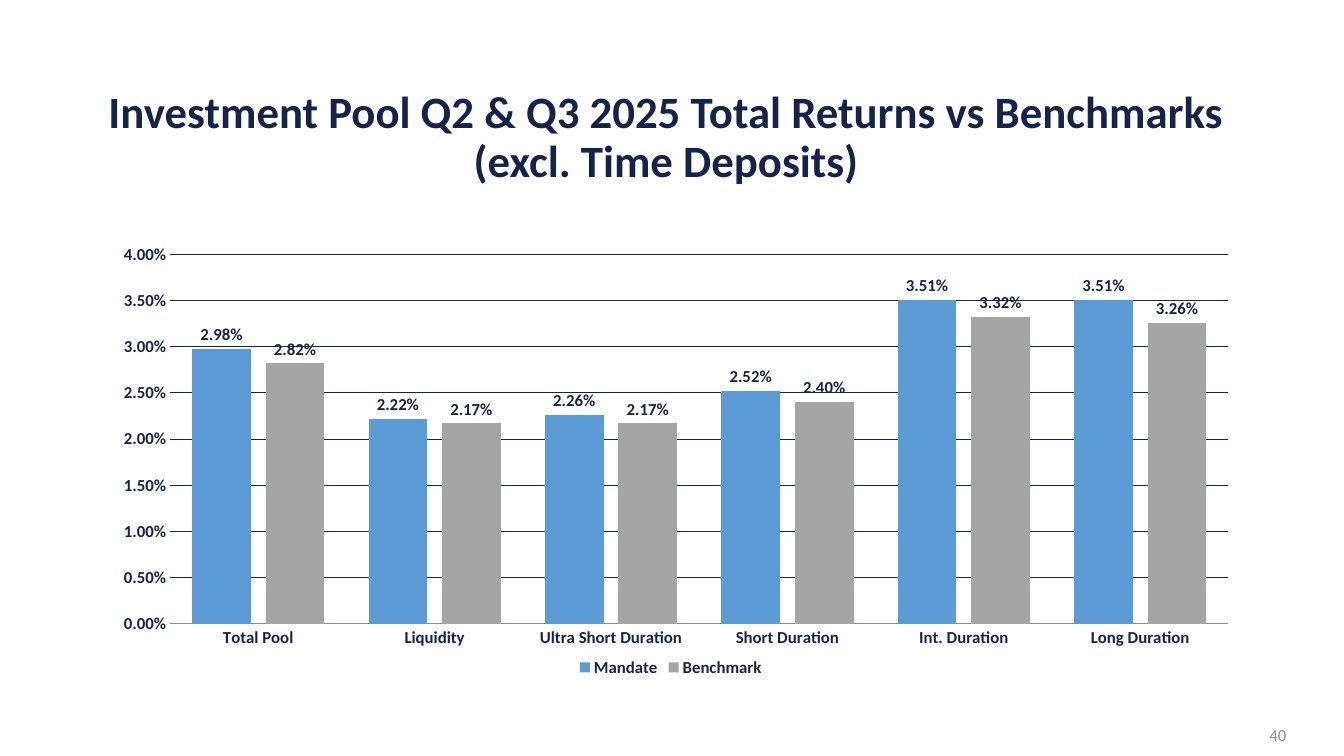
"""Build a slide comparing investment pool returns with their benchmarks."""
from lxml import etree
from pptx import Presentation
from pptx.chart import data
from pptx.dml import color
from pptx.enum import chart as chart_enum, text
from pptx.oxml import ns
from pptx.util import Pt

TITLE = "Investment Pool Q2 & Q3 2025 Total Returns vs Benchmarks (excl. Time Deposits)"
PAGE_NUMBER = "40"
CATEGORIES = ["Total Pool", "Liquidity", "Ultra Short Duration",
              "Short Duration", "Int. Duration", "Long Duration"]
RETURNS = {
    "Mandate": [0.0298, 0.0222, 0.0226, 0.0252, 0.0351, 0.0351],
    "Benchmark": [0.0282, 0.0217, 0.0217, 0.024, 0.0332, 0.0326],
}
COLORS = {"navy": "15234A", "muted": "8C8D96", "Mandate": "5B9BD5", "Benchmark": "A5A5A5"}
FONT = "Calibri"
PERCENT = "0.00%"
TITLE_BOX = (46.8, 54, 858.24, 90)
NUMBER_BOX = (709.92, 510.5, 216, 28.8)
CHART_BOX = (72.72, 144, 812.88, 342.72)
PLOT_AREA = {"x": 0.06, "y": 0.11, "w": 0.93, "h": 0.77}


def points(box):
    return [Pt(length) for length in box]


def rgb(name):
    return color.RGBColor.from_string(COLORS[name])


def style_font(font, size, color_name, bold):
    font.name = FONT
    font.size = Pt(size)
    font.bold = bold
    font.color.rgb = rgb(color_name)


def style_line(line, color_name):
    line.color.rgb = rgb(color_name)
    line.width = Pt(0.5)


def add_text(slide, content, box, size, color_name, bold, alignment, spacing):
    frame = slide.shapes.add_textbox(*points(box)).text_frame
    frame.word_wrap = True
    frame.vertical_anchor = text.MSO_ANCHOR.MIDDLE
    frame.text = content
    paragraph = frame.paragraphs[0]
    paragraph.alignment = alignment
    paragraph.line_spacing = spacing
    style_font(paragraph.runs[0].font, size, color_name, bold)


def place_plot_area(chart):
    plot_area = chart.element.find(".//" + ns.qn("c:plotArea"))
    for existing in plot_area.findall(ns.qn("c:layout")):
        plot_area.remove(existing)
    layout = etree.Element(ns.qn("c:layout"))
    manual = etree.SubElement(layout, ns.qn("c:manualLayout"))
    settings = {"layoutTarget": "inner", "xMode": "edge", "yMode": "edge", **PLOT_AREA}
    for tag, value in settings.items():
        etree.SubElement(manual, ns.qn("c:" + tag)).set("val", str(value))
    plot_area.insert(0, layout)


def style_axes(chart):
    for axis in (chart.category_axis, chart.value_axis):
        axis.major_tick_mark = axis.minor_tick_mark = chart_enum.XL_TICK_MARK.NONE
        style_font(axis.tick_labels.font, 12, "navy", True)
    style_line(chart.category_axis.format.line, "muted")
    value_axis = chart.value_axis
    value_axis.minimum_scale, value_axis.maximum_scale = 0, 0.04
    value_axis.major_unit = 0.005
    value_axis.format.line.fill.background()
    value_axis.tick_labels.number_format = PERCENT
    value_axis.tick_labels.number_format_is_linked = False
    style_line(value_axis.major_gridlines.format.line, "navy")


def add_returns_chart(slide):
    chart_data = data.CategoryChartData(number_format=PERCENT)
    chart_data.categories = CATEGORIES
    for name, values in RETURNS.items():
        chart_data.add_series(name, values)
    chart = slide.shapes.add_chart(
        chart_enum.XL_CHART_TYPE.COLUMN_CLUSTERED, *points(CHART_BOX), chart_data).chart
    chart.has_title = False
    style_font(chart.font, 12, "navy", True)
    chart.has_legend = True
    chart.legend.position = chart_enum.XL_LEGEND_POSITION.BOTTOM
    chart.legend.include_in_layout = False
    style_font(chart.legend.font, 12, "navy", True)
    style_axes(chart)

    plot = chart.plots[0]
    plot.gap_width, plot.overlap = 75, -25
    plot.vary_by_categories = False
    for series in plot.series:
        series.format.fill.solid()
        series.format.fill.fore_color.rgb = rgb(series.name)
        labels = series.data_labels
        labels.show_value = True
        labels.position = chart_enum.XL_LABEL_POSITION.OUTSIDE_END
        labels.number_format = PERCENT
        labels.number_format_is_linked = False
        style_font(labels.font, 12, "navy", True)
    place_plot_area(chart)


def main():
    presentation = Presentation()
    presentation.slide_width, presentation.slide_height = Pt(960), Pt(540)
    slide = presentation.slides.add_slide(presentation.slide_layouts[6])
    add_text(slide, PAGE_NUMBER, NUMBER_BOX, 12, "muted", False, text.PP_ALIGN.RIGHT, 1)
    add_returns_chart(slide)
    add_text(slide, TITLE, TITLE_BOX, 32, "navy", True, text.PP_ALIGN.CENTER, 0.9)
    presentation.save("out.pptx")


if __name__ == "__main__":
    main()
